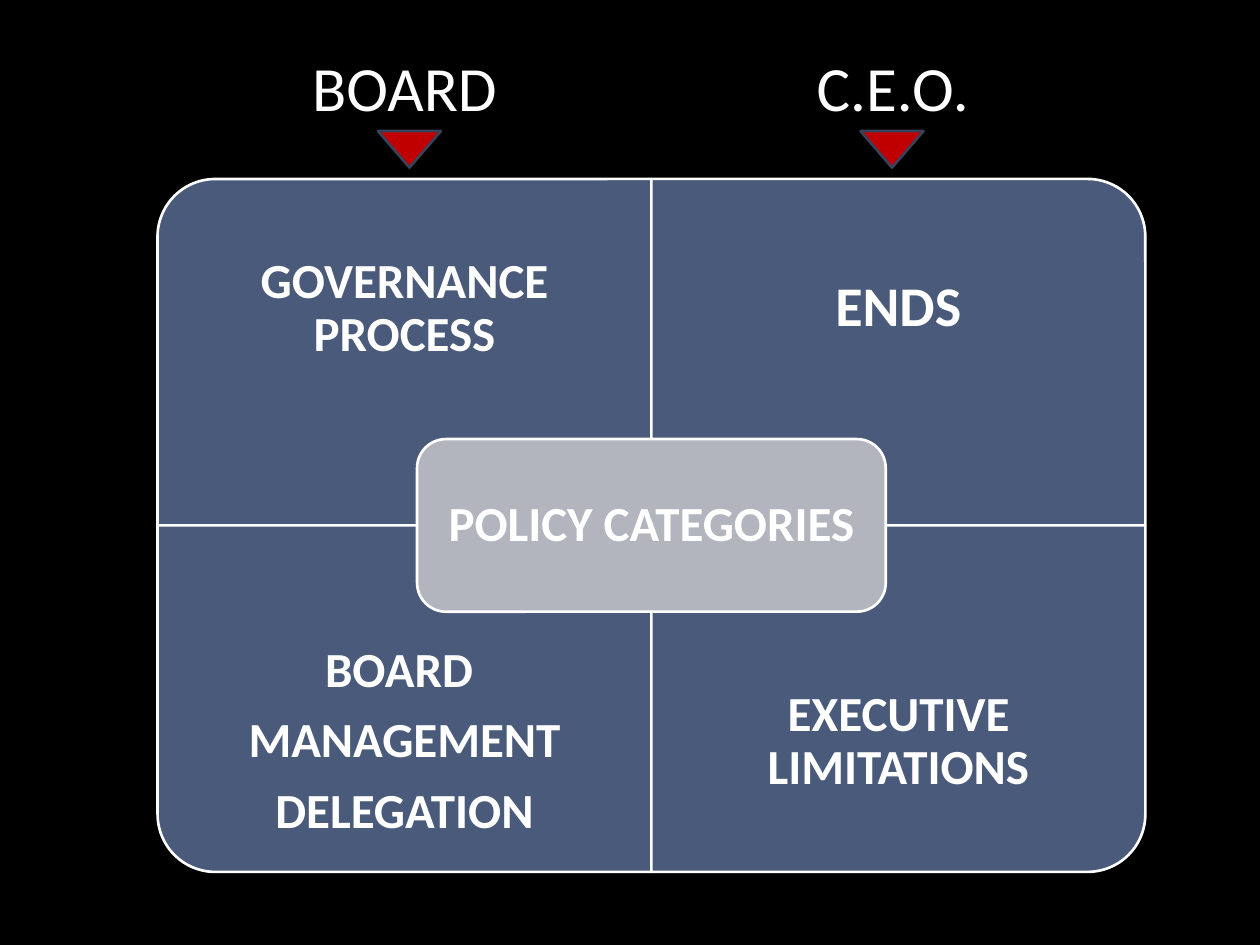
import pptx
import pptx.util
import pptx.dml.color
import pptx.enum.shapes
import pptx.enum.text

Inches, Pt = pptx.util.Inches, pptx.util.Pt
SHAPE = pptx.enum.shapes.MSO_SHAPE

COLORS = {"background": "000000", "panel": "4A5A7A", "center": "B2B5BE",
          "text": "FFFFFF", "arrow": "C00000", "arrow_line": "37435A"}
FONT = "Calibri"
PANELS = [
    (0, 0, 270, 28, 0.22, ["GOVERNANCE PROCESS"]),
    (1, 0, 0, 32, 0.25, ["ENDS"]),
    (0, 1, 180, 28, 0.22, ["BOARD ", "MANAGEMENT", "DELEGATION"]),
    (1, 1, 90, 28, 0.22, ["EXECUTIVE LIMITATIONS"]),
]
HEADINGS = [("BOARD", 1.92, 2.58, 3), ("C.E.O.", 5.92, 2.33, 6.83)]
LEFT, TOP, PANEL_W, PANEL_H, LABEL_H = 1.25, 1.42, 3.92, 2.75, 2.06
CENTER_W, CENTER_H = 3.72, 1.37


def rgb(name):
    return pptx.dml.color.RGBColor.from_string(COLORS[name])


def add_box(s, kind, box, fill, line="text", rotation=0):
    sp = s.shapes.add_shape(kind, *map(Inches, box))
    sp.shadow.inherit = False
    sp.fill.solid()
    sp.fill.fore_color.rgb = rgb(fill)
    sp.line.color.rgb = rgb(line)
    sp.line.width = Pt(1.5)
    sp.rotation = rotation
    return sp


def write(sp, lines, size, inset, bold=True):
    tf = sp.text_frame
    tf.word_wrap = True
    tf.vertical_anchor = pptx.enum.text.MSO_ANCHOR.MIDDLE
    tf.margin_left = tf.margin_right = Inches(inset)
    tf.margin_top = tf.margin_bottom = Inches(inset if bold else 0.05)
    for i, line in enumerate(lines):
        p = tf.add_paragraph() if i else tf.paragraphs[0]
        p.alignment = pptx.enum.text.PP_ALIGN.CENTER
        if bold:
            p.line_spacing = 0.9
            p.space_after = Pt(size * 0.35)
        r = p.add_run()
        r.text = line
        r.font.name = FONT
        r.font.size = Pt(size)
        r.font.bold = bold
        r.font.color.rgb = rgb("text")


def add_panel(s, col, row, rotation, size, inset, lines):
    x, y = LEFT + col * PANEL_W, TOP + row * PANEL_H
    w, h = (PANEL_H, PANEL_W) if rotation % 180 else (PANEL_W, PANEL_H)
    box = (x + (PANEL_W - w) / 2, y + (PANEL_H - h) / 2, w, h)
    add_box(s, SHAPE.ROUND_1_RECTANGLE, box, "panel", rotation=rotation)
    label_y = y + row * (PANEL_H - LABEL_H)
    label = s.shapes.add_textbox(*map(Inches, (x, label_y, PANEL_W, LABEL_H)))
    write(label, lines, size, inset)


def main():
    """Build the policy categories slide."""
    prs = pptx.Presentation()
    prs.slide_width, prs.slide_height = Inches(10), Inches(7.5)
    s = prs.slides.add_slide(prs.slide_layouts[6])
    s.background.fill.solid()
    s.background.fill.fore_color.rgb = rgb("background")

    for panel in PANELS:
        add_panel(s, *panel)

    center = add_box(s, SHAPE.ROUNDED_RECTANGLE,
                     (LEFT + PANEL_W - CENTER_W / 2, TOP + PANEL_H - CENTER_H / 2,
                      CENTER_W, CENTER_H), "center")
    write(center, ["POLICY CATEGORIES"], 28, 0.12)

    for text, x, w, arrow_x in HEADINGS:
        heading = s.shapes.add_textbox(*map(Inches, (x, 0.33, w, 0.71)))
        write(heading, [text], 36, 0.1, bold=False)
        add_box(s, SHAPE.FLOWCHART_MERGE, (arrow_x, 1.04, 0.5, 0.29),
                "arrow", "arrow_line")

    prs.save("out.pptx")


if __name__ == "__main__":
    main()
